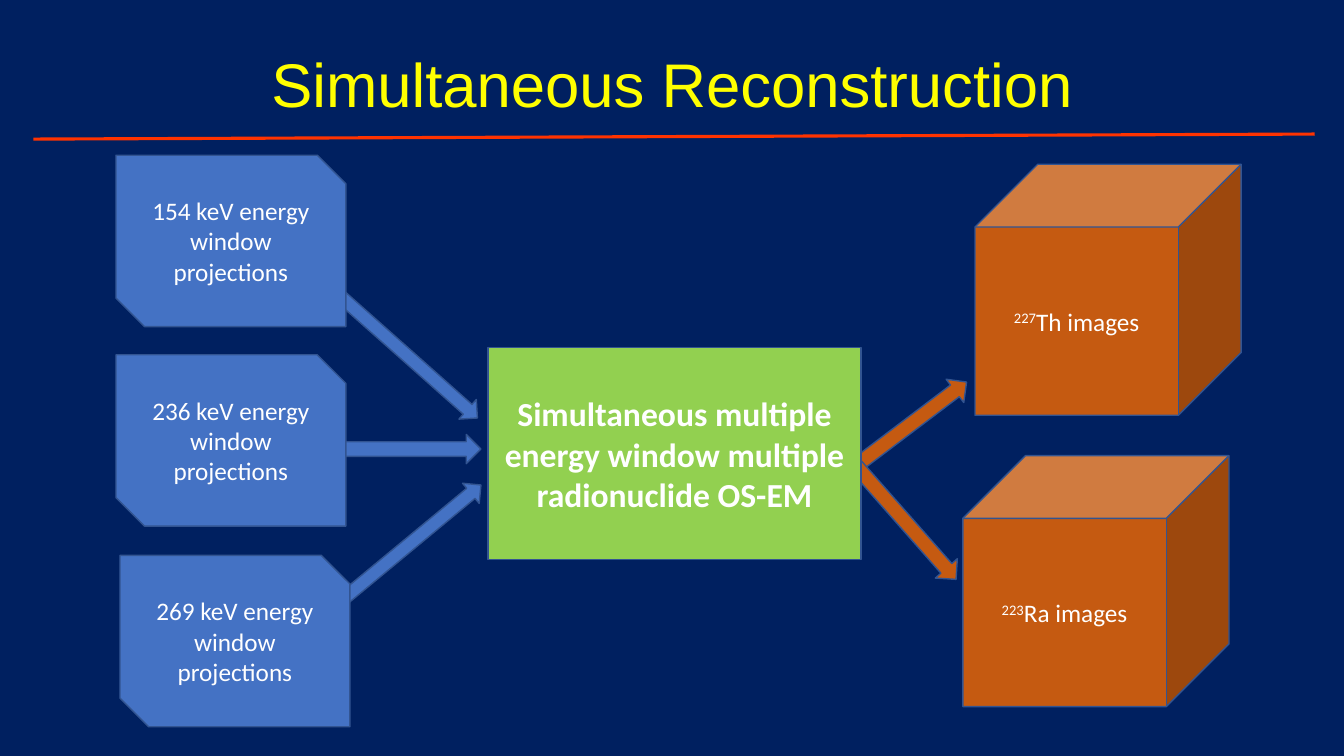
import pptx
import pptx.util
import pptx.dml.color
import pptx.enum.shapes
import pptx.enum.text
import pptx.oxml
import pptx.oxml.ns

Inches, Pt = pptx.util.Inches, pptx.util.Pt
SHAPE = pptx.enum.shapes.MSO_SHAPE
COLORS = {
    "background": "002060",
    "title": "FFFF00",
    "rule": "FF3300",
    "input": "4472C4",
    "method": "92D050",
    "output": "C55A11",
    "outline": "325491",
    "text": "FFFFFF",
}


def rgb(name):
    return pptx.dml.color.RGBColor.from_string(COLORS[name])


class Deck:
    """Holds the style and the current slide."""

    font, size = "Calibri", 18

    def __init__(self, prs):
        self.slide = prs.slides.add_slide(prs.slide_layouts[6])
        fill = self.slide.background.fill
        fill.solid()
        fill.fore_color.rgb = rgb("background")

    def label(self, s, text, size=None, font=None, color="text", bold=False, superscript=""):
        tf = s.text_frame
        tf.word_wrap = True
        tf.vertical_anchor = pptx.enum.text.MSO_ANCHOR.MIDDLE
        p = tf.paragraphs[0]
        p.alignment = pptx.enum.text.PP_ALIGN.CENTER
        p.font.name = font or self.font
        p.font.size = Pt(size or self.size)
        p.font.bold = bold
        p.font.color.rgb = rgb(color)
        if superscript:
            r = p.add_run()
            r.text = superscript
            r.font._element.set("baseline", "30000")
        p.add_run().text = text
        return p

    def title(self, text, left, top, width, height):
        s = self.slide.shapes.add_textbox(
            Inches(left), Inches(top), Inches(width), Inches(height))
        self.label(s, text, size=44, font="Arial", color="title").line_spacing = 0.9

    def shape(self, kind, color, left, top, width, height, rotation=0):
        s = self.slide.shapes.add_shape(
            kind, Inches(left), Inches(top), Inches(width), Inches(height))
        s.rotation = rotation
        s.shadow.inherit = False
        s.fill.solid()
        s.fill.fore_color.rgb = rgb(color)
        s.line.color.rgb = rgb("outline")
        s.line.width = Pt(1)
        return s

    def line(self, x1, y1, x2, y2, color, width):
        s = self.slide.shapes.add_connector(
            pptx.enum.shapes.MSO_CONNECTOR.STRAIGHT,
            Inches(x1), Inches(y1), Inches(x2), Inches(y2))
        s.line.color.rgb = rgb(color)
        s.line.width = Pt(width)
        s._element.spPr.append(
            pptx.oxml.parse_xml("<a:effectLst %s/>" % pptx.oxml.ns.nsdecls("a")))


def main():
    prs = pptx.Presentation()
    prs.slide_width, prs.slide_height = Inches(13.33), Inches(7.5)
    deck = Deck(prs)

    # Title
    deck.title("Simultaneous Reconstruction", 0.92, 0.4, 11.5, 0.94)

    # Reconstructed images
    for isotope, element, left, top in (("227", "Th", 9.67, 1.63), ("223", "Ra", 9.55, 4.52)):
        cube = deck.shape(SHAPE.CUBE, "output", left, top, 2.64, 2.49)
        deck.label(cube, f"{element} images", superscript=isotope)

    # Arrows into and out of the method, partly hidden behind the boxes
    for color, left, top, width, height, rotation in (
        ("input", 2.9, 3.32, 2.1, 0.26, 41.6),
        ("input", 3.36, 4.31, 1.41, 0.29, 0),
        ("input", 3.08, 5.29, 1.91, 0.26, 320.4),
        ("output", 8.32, 4.07, 1.41, 0.29, 322.9),
        ("output", 8.17, 5.01, 1.58, 0.29, 48.6),
    ):
        deck.shape(SHAPE.RIGHT_ARROW, color, left, top, width, height, rotation)

    # Reconstruction method
    method = deck.shape(SHAPE.RECTANGLE, "method", 4.84, 3.45, 3.7, 2.1)
    deck.label(method, "Simultaneous multiple energy window multiple radionuclide OS-EM",
               size=24, bold=True)

    # Energy window projections
    for energy, left, top in ((154, 1.15, 1.54), (236, 1.15, 3.52), (269, 1.19, 5.51)):
        box = deck.shape(SHAPE.SNIP_2_DIAG_RECTANGLE, "input", left, top, 2.28, 1.7)
        deck.label(box, f"{energy} keV energy window projections")

    # Rule under the title
    deck.line(0.33, 1.38, 13.04, 1.33, "rule", 2.25)

    prs.save("out.pptx")


if __name__ == "__main__":
    main()
